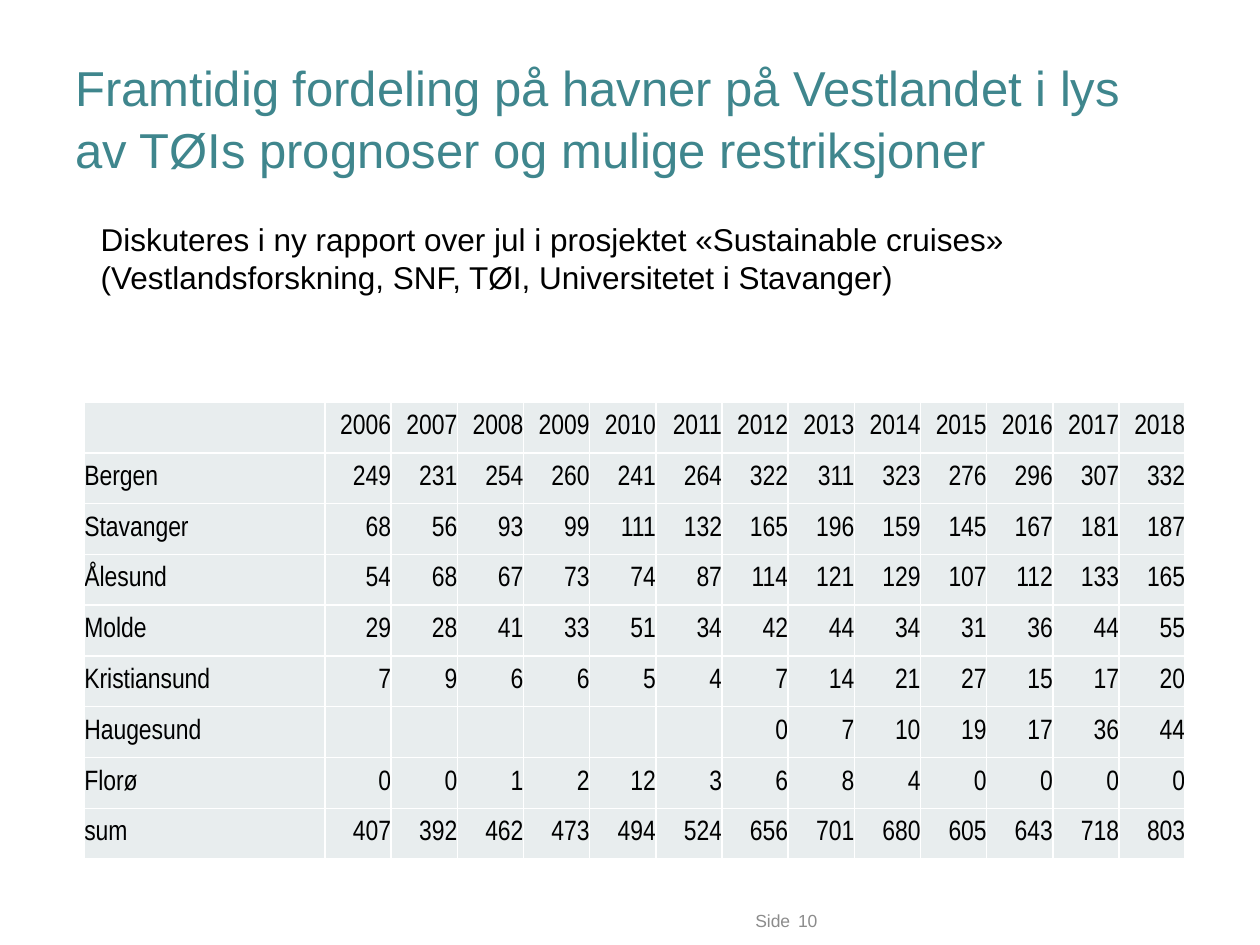
from lxml.etree import SubElement
from pptx import Presentation
from pptx.dml.color import RGBColor
from pptx.enum.text import MSO_ANCHOR, PP_ALIGN
from pptx.oxml.ns import qn
from pptx.util import Pt

COLORS = {"title": "3F868D", "text": "000000", "footer": "8C8C8C",
          "cell": "E8EDEE", "border": "FFFFFF"}

YEARS = range(2006, 2019)
PORT_CALLS = {
    "Bergen": [249, 231, 254, 260, 241, 264, 322, 311, 323, 276, 296, 307, 332],
    "Stavanger": [68, 56, 93, 99, 111, 132, 165, 196, 159, 145, 167, 181, 187],
    "Ålesund": [54, 68, 67, 73, 74, 87, 114, 121, 129, 107, 112, 133, 165],
    "Molde": [29, 28, 41, 33, 51, 34, 42, 44, 34, 31, 36, 44, 55],
    "Kristiansund": [7, 9, 6, 6, 5, 4, 7, 14, 21, 27, 15, 17, 20],
    "Haugesund": [""] * 6 + [0, 7, 10, 19, 17, 36, 44],
    "Florø": [0, 0, 1, 2, 12, 3, 6, 8, 4, 0, 0, 0, 0],
    "sum": [407, 392, 462, 473, 494, 524, 656, 701, 680, 605, 643, 718, 803],
}
NO_MARGINS = {f"margin_{side}": 0 for side in ("left", "top", "right", "bottom")}


def set_attributes(target, values):
    for name, value in values.items():
        setattr(target, name, value)


def write(p, text, size, color, font="Arial"):
    r = p.add_run()
    r.text = text
    set_attributes(r.font, {"name": font, "size": Pt(size)})
    r.font.color.rgb = RGBColor.from_string(COLORS[color])


def add_text(s, box, text, size, color, frame=None, paragraph=None):
    tf = s.shapes.add_textbox(*map(Pt, box)).text_frame
    set_attributes(tf, {"word_wrap": True, **(frame or {})})
    p = tf.paragraphs[0]
    set_attributes(p, paragraph or {})
    write(p, text, size, color)


def add_footer(s, box):
    left, top, width, height = box
    label_width, gap = 34.5, 4.5
    frame = {"vertical_anchor": MSO_ANCHOR.MIDDLE, **NO_MARGINS}
    add_text(s, (left, top, label_width, height), "Side", 10, "footer",
             frame, {"alignment": PP_ALIGN.RIGHT})
    number_left = label_width + gap
    add_text(s, (left + number_left, top, width - number_left, height),
             "10", 10, "footer", frame)


def format_cell(cell):
    set_attributes(cell, {"vertical_anchor": MSO_ANCHOR.MIDDLE, **NO_MARGINS})
    tc_pr = cell._tc.get_or_add_tcPr()
    for side in ("lnL", "lnR", "lnT", "lnB"):
        line = SubElement(tc_pr, qn(f"a:{side}"), w=str(Pt(1)))
        fill = SubElement(line, qn("a:solidFill"))
        SubElement(fill, qn("a:srgbClr"), val=COLORS["border"])
    cell.fill.solid()
    cell.fill.fore_color.rgb = RGBColor.from_string(COLORS["cell"])


def add_port_table(s, box):
    rows = [["", *YEARS]] + [[port, *calls] for port, calls in PORT_CALLS.items()]
    table = s.shapes.add_table(len(rows), len(rows[0]), *map(Pt, box)).table
    set_attributes(table, {"first_row": False, "horz_banding": False})

    width, height = box[2:]
    port_width = 137.5
    for i, column in enumerate(table.columns):
        column.width = Pt((width - port_width) / len(YEARS) if i else port_width)
    for row in table.rows:
        row.height = Pt(height / len(rows))

    for i, values in enumerate(rows):
        for j, value in enumerate(values):
            cell = table.cell(i, j)
            format_cell(cell)
            if value == "":
                continue
            p = cell.text_frame.paragraphs[0]
            p.alignment = PP_ALIGN.RIGHT if j else PP_ALIGN.LEFT
            write(p, str(value), 16, "text", "Arial Narrow")


def main():
    prs = Presentation()
    set_attributes(prs, {"slide_width": Pt(720), "slide_height": Pt(540)})
    s = prs.slides.add_slide(prs.slide_layouts[6])
    add_text(s, (36, 21.6, 648, 90),
             "Framtidig fordeling på havner på Vestlandet i lys "
             "av TØIs prognoser og mulige restriksjoner", 28, "title",
             {"vertical_anchor": MSO_ANCHOR.MIDDLE}, {"line_spacing": 1.05})
    add_text(s, (50.4, 122.4, 550, 51),
             "Diskuteres i ny rapport over jul i prosjektet «Sustainable cruises» "
             "(Vestlandsforskning, SNF, TØI, Universitetet i Stavanger)", 18, "text")
    add_port_table(s, (48.2, 229.7, 629.3, 261.4))
    add_footer(s, (417, 515.5, 73.5, 21))
    prs.save("out.pptx")


if __name__ == "__main__":
    main()
